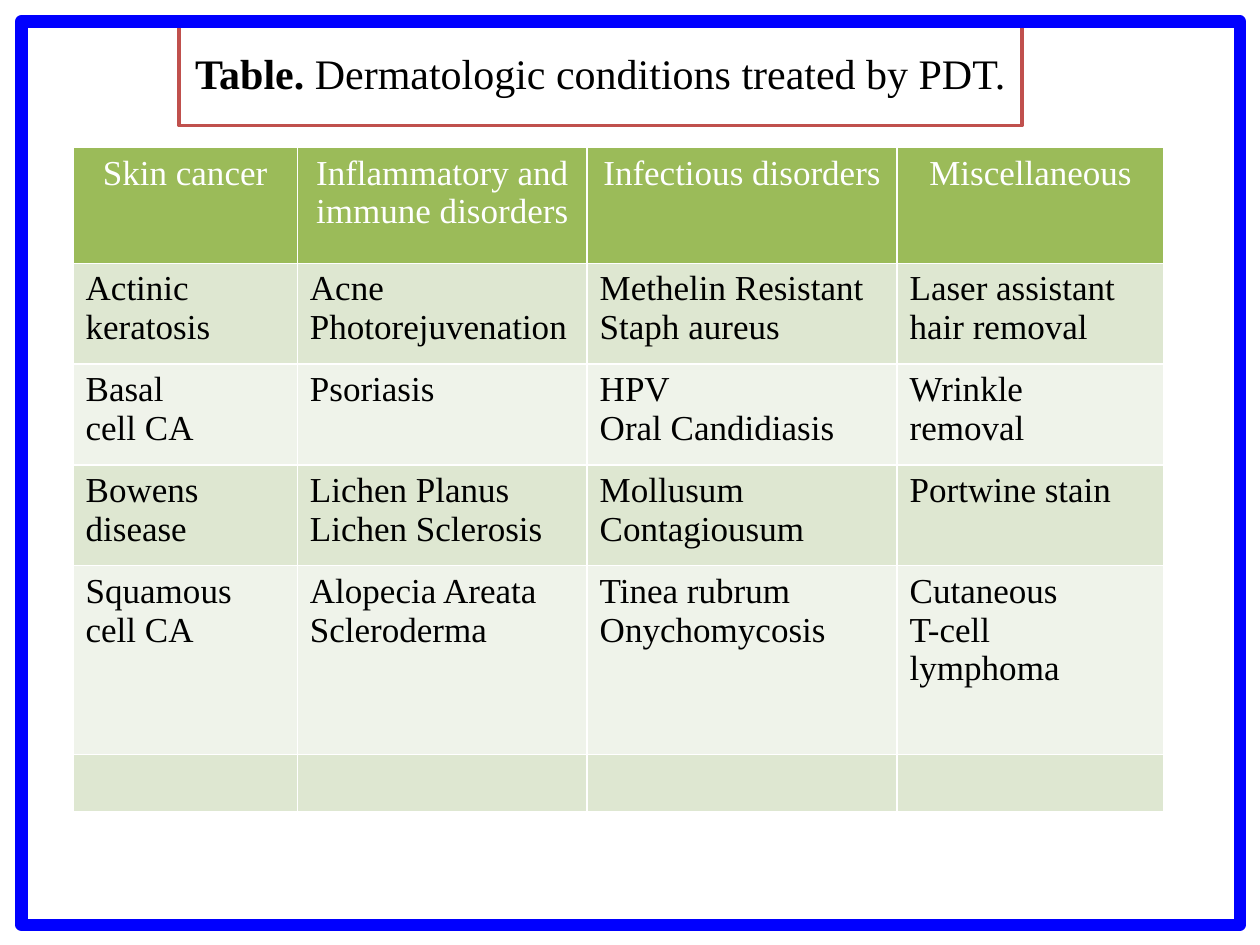
"""Build the slide listing dermatologic conditions treated by PDT."""
from lxml import etree
from pptx import Presentation
from pptx import util as u
from pptx.dml.color import RGBColor
from pptx.enum import shapes, text
from pptx.oxml.ns import qn

COLORS = {"header": "9BBB59", "odd": "DEE7D1", "even": "EFF3EA", "white": "FFFFFF",
          "black": "000000", "title_line": "C0504D", "frame": "0000FF"}
FONT = "Times New Roman"
TITLE = [("Table.", True), (" Dermatologic conditions treated by PDT.", False)]
CONDITIONS = [
    ("Skin cancer", "Inflammatory and immune disorders", "Infectious disorders", "Miscellaneous"),
    ("Actinic keratosis", "Acne\nPhotorejuvenation", "Methelin Resistant Staph aureus",
     "Laser assistant hair removal"),
    ("Basal\ncell CA", "Psoriasis", "HPV\nOral Candidiasis", "Wrinkle\nremoval"),
    ("Bowens disease", "Lichen Planus\nLichen Sclerosis", "Mollusum Contagiousum",
     "Portwine stain"),
    ("Squamous\ncell CA", "Alopecia Areata\nScleroderma", "Tinea rubrum\nOnychomycosis",
     "Cutaneous\nT-cell\nlymphoma"),
    ("", "", "", ""),
]
COLUMN_WIDTHS = (1.78, 2.3, 2.46, 2.12)
ROW_HEIGHTS = (0.92, 0.8, 0.8, 0.8, 1.5, 0.45)
TITLE_BOX = (1.42, 0.33, 6.69, 0.5)
FRAME_BOX = (0.17, 0.17, 9.67, 7.17)


def rgb(color):
    return RGBColor.from_string(COLORS[color])


def apply(target, values):
    for key, value in values.items():
        setattr(target, key, value)


def style_font(font, size, color, bold=False):
    apply(font, {"name": FONT, "size": u.Pt(size), "bold": bold})
    font.color.rgb = rgb(color)


def outline(shape, color, width):
    shape.line.color.rgb = rgb(color)
    shape.line.width = u.Pt(width)


def add_title(slide):
    title = slide.shapes.title
    sides = ("left", "top", "width", "height")
    apply(title, dict(zip(sides, map(u.Inches, TITLE_BOX))))
    title.fill.solid()
    title.fill.fore_color.rgb = rgb("white")
    outline(title, "title_line", 2)
    frame = title.text_frame
    apply(frame, {"word_wrap": False, "auto_size": text.MSO_AUTO_SIZE.SHAPE_TO_FIT_TEXT,
                  "vertical_anchor": text.MSO_ANCHOR.MIDDLE})
    heading = frame.paragraphs[0]
    heading.alignment = text.PP_ALIGN.CENTER
    for words, bold in TITLE:
        run = heading.add_run()
        run.text = words
        style_font(run.font, 24, "black", bold)


def add_borders(cell):
    properties = cell._tc.get_or_add_tcPr()
    for side in ("lnL", "lnR", "lnT", "lnB"):
        line = etree.SubElement(properties, qn(f"a:{side}"), w=str(u.Pt(1)))
        fill = etree.SubElement(line, qn("a:solidFill"))
        etree.SubElement(fill, qn("a:srgbClr"), val=COLORS["white"])


def fill_cell(cell, words, row):
    add_borders(cell)
    cell.fill.solid()
    cell.fill.fore_color.rgb = rgb("header" if row == 0 else "odd" if row % 2 else "even")
    cell.text = words
    for paragraph in cell.text_frame.paragraphs:
        paragraph.alignment = text.PP_ALIGN.LEFT if row else text.PP_ALIGN.CENTER
        for run in paragraph.runs:
            style_font(run.font, 20, "black" if row else "white")


def add_conditions(slide):
    size = (sum(COLUMN_WIDTHS), sum(ROW_HEIGHTS))
    table = slide.shapes.add_table(len(ROW_HEIGHTS), len(COLUMN_WIDTHS),
                                   *map(u.Inches, (0.58, 1.17, *size))).table
    for column, width in zip(table.columns, COLUMN_WIDTHS):
        column.width = u.Inches(width)
    for row, height in enumerate(ROW_HEIGHTS):
        table.rows[row].height = u.Inches(height)
        for column, words in enumerate(CONDITIONS[row]):
            fill_cell(table.cell(row, column), words, row)


def add_frame(slide):
    frame = slide.shapes.add_shape(shapes.MSO_SHAPE.RECTANGLE, *map(u.Inches, FRAME_BOX))
    frame.shadow.inherit = False
    frame.fill.background()
    outline(frame, "frame", 7)


def main():
    deck = Presentation()
    apply(deck, {"slide_width": u.Inches(10), "slide_height": u.Inches(7.5)})
    slide = deck.slides.add_slide(deck.slide_layouts[5])
    add_title(slide)
    add_conditions(slide)
    add_frame(slide)
    deck.save("out.pptx")


if __name__ == "__main__":
    main()
